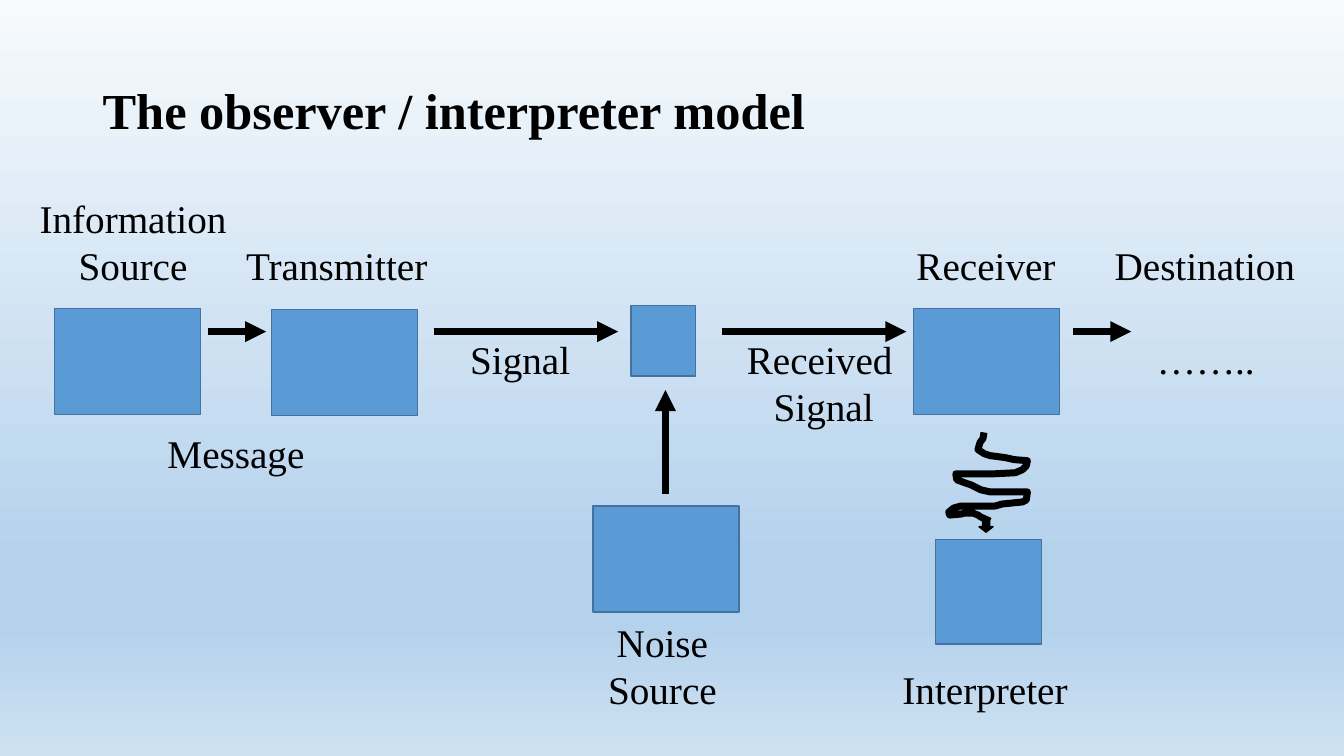
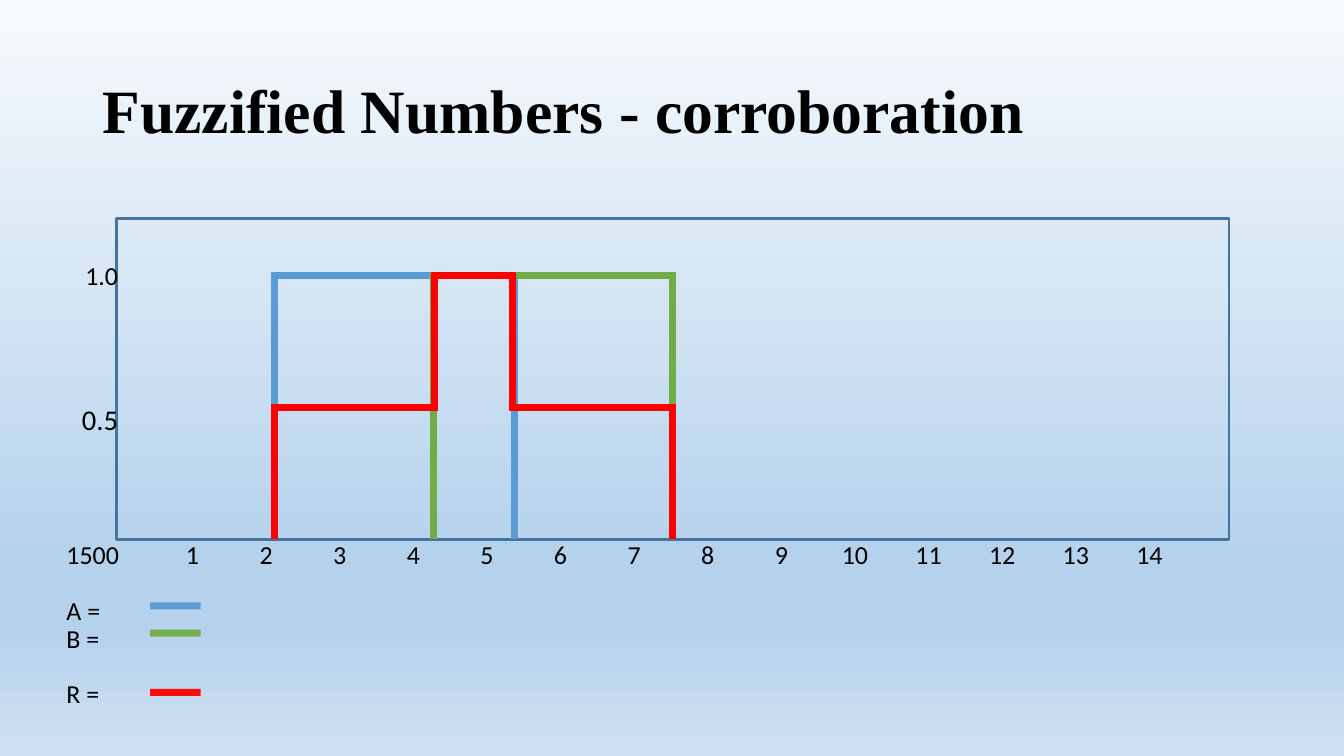
from dataclasses import dataclass

import lxml.etree
import pptx
import pptx.dml.color
import pptx.enum.dml
import pptx.enum.shapes
import pptx.enum.text
import pptx.oxml.ns
import pptx.shapes.base
import pptx.slide
import pptx.util

Inches = pptx.util.Inches
Align = pptx.enum.text.PP_ALIGN
Preset = pptx.enum.shapes.MSO_SHAPE
qn = pptx.oxml.ns.qn
Point = tuple[float, float]

BLACK = "000000"
BLUE = "5B9BD5"
OUTLINE = "43739E"
GREEN = "70AD47"
RED = "FF0000"
BACKDROP = [(0, "F7FAFD"), (74, "B5D2EC"), (83, "B5D2EC"), (100, "CEE1F2")]
SERIF = "Times New Roman"
SANS = "Calibri"
LINE_WIDTH = 5
HALF_LINE = 0.035


@dataclass
class Block:
    left: float
    top: float
    width: float
    height: float
    kind: Preset = Preset.RECTANGLE
    fill: str | None = BLUE
    outline: str = OUTLINE
    weight: float = 1


@dataclass
class Label:
    text: str
    x: float
    y: float
    size: float = 18.5
    font: str = SANS
    align: Align = Align.CENTER


@dataclass
class Stroke:
    start: Point
    end: Point
    color: str = BLACK
    arrow: bool = False
    opacity: int = 100


@dataclass
class LegendEntry:
    name: str
    label_y: float
    line_y: float
    color: str


def rgb(value: str) -> pptx.dml.color.RGBColor:
    return pptx.dml.color.RGBColor.from_string(value)


def add_text(page: pptx.slide.Slide, text: str, area: tuple[float, ...],
             font: dict, align: Align = Align.LEFT, inset: float = 0,
             spacing: float = 1) -> None:
    box = page.shapes.add_textbox(*map(Inches, area))
    frame_format = {
        "word_wrap": True,
        "vertical_anchor": pptx.enum.text.MSO_ANCHOR.MIDDLE,
        "margin_left": Inches(inset), "margin_right": Inches(inset),
        "margin_top": Inches(0), "margin_bottom": Inches(0),
    }
    for name, value in frame_format.items():
        setattr(box.text_frame, name, value)
    para = box.text_frame.paragraphs[0]
    para.alignment = align
    para.line_spacing = spacing
    span = para.add_run()
    span.text = text
    for name, value in font.items():
        setattr(span.font, name, value)
    span.font.color.rgb = rgb(BLACK)


def add_label(page: pptx.slide.Slide, label: Label) -> None:
    width, height = 2.4, 0.5
    share = {Align.LEFT: 0, Align.CENTER: 0.5, Align.RIGHT: 1}[label.align]
    area = (label.x - width * share, label.y - height / 2, width, height)
    font = {"name": label.font, "size": pptx.util.Pt(label.size)}
    add_text(page, label.text, area, font, label.align)


def add_block(page: pptx.slide.Slide, block: Block) -> None:
    area = (block.left, block.top, block.width, block.height)
    shape = page.shapes.add_shape(block.kind, *map(Inches, area))
    shape.shadow.inherit = False
    if block.fill:
        shape.fill.solid()
        shape.fill.fore_color.rgb = rgb(block.fill)
    else:
        shape.fill.background()
    shape.line.color.rgb = rgb(block.outline)
    shape.line.width = pptx.util.Pt(block.weight)


def add_stroke(page: pptx.slide.Slide, stroke: Stroke) -> None:
    line = page.shapes.add_connector(
        pptx.enum.shapes.MSO_CONNECTOR.STRAIGHT,
        *map(Inches, stroke.start + stroke.end))
    line.line.color.rgb = rgb(stroke.color)
    line.line.width = pptx.util.Pt(LINE_WIDTH)
    properties = line.element.spPr
    outline = properties.find(qn("a:ln"))
    if stroke.opacity < 100:
        color = outline.find(".//" + qn("a:srgbClr"))
        lxml.etree.SubElement(color, qn("a:alpha"), val=str(stroke.opacity * 1000))
    if stroke.arrow:
        lxml.etree.SubElement(outline, qn("a:tailEnd"), type="triangle")
    lxml.etree.SubElement(properties, qn("a:effectLst"))


def add_curve(page: pptx.slide.Slide, points: list[Point], color: str) -> None:
    for (x1, y1), (x2, y2) in zip(points, points[1:]):
        overlap = HALF_LINE if y1 == y2 else 0
        add_stroke(page, Stroke((x1 - overlap, y1), (x2 + overlap, y2), color))


def add_squiggle(page: pptx.slide.Slide, points: list[Point]) -> None:
    corners = [(Inches(x), Inches(y)) for x, y in points]
    builder = page.shapes.build_freeform(*corners[0])
    builder.add_line_segments(corners[1:], close=False)
    shape = builder.convert_to_shape()
    shape.shadow.inherit = False
    shape.fill.background()
    shape.line.color.rgb = rgb(BLACK)
    shape.line.width = pptx.util.Pt(LINE_WIDTH)


def add_page(deck, title: str, size: float) -> pptx.slide.Slide:
    page = deck.slides.add_slide(deck.slide_layouts[6])
    fill = page.background.fill
    fill.gradient()
    fill.gradient_angle = 270
    stops = page.element.find(".//" + qn("a:gsLst"))
    for stop in list(stops):
        stops.remove(stop)
    for position, color in BACKDROP:
        stop = lxml.etree.SubElement(stops, qn("a:gs"), pos=str(position * 1000))
        lxml.etree.SubElement(stop, qn("a:srgbClr"), val=color)
    font = {"name": SERIF, "size": pptx.util.Pt(size), "bold": True}
    add_text(page, title, (0.92, 0.4, 11.5, 1.45), font, inset=0.1, spacing=0.9)
    return page


def build_model(deck) -> None:
    page = add_page(deck, "The observer / interpreter model", 36)
    first_row, row_pitch = 2.16, 0.467
    labels = [
        ("Information", 1.32, 0), ("Source", 1.32, 1), ("Transmitter", 3.34, 1),
        ("Receiver", 9.78, 1), ("Destination", 11.95, 1),
        ("Signal", 5.16, 3), ("Received", 8.13, 3), ("……..", 11.96, 3),
        ("Signal", 8.17, 4), ("Message", 2.34, 5),
        ("Noise", 6.57, 9), ("Source", 6.57, 10), ("Interpreter", 9.77, 10),
    ]
    for text, x, row in labels:
        add_label(page, Label(text, x, first_row + row * row_pitch, 28, SERIF))

    for left, top in [(0.54, 3.06), (2.69, 3.07), (9.06, 3.06), (5.88, 5.02)]:
        add_block(page, Block(left, top, 1.45, 1.05))
    add_block(page, Block(6.26, 3.03, 0.64, 0.7))
    add_block(page, Block(9.28, 5.35, 1.05, 1.04))

    flow_y = 3.29
    for start, end in [(2.06, 2.64), (4.3, 6.13), (7.16, 8.99), (10.64, 11.22)]:
        add_stroke(page, Stroke((start, flow_y), (end, flow_y), arrow=True))
    add_stroke(page, Stroke((6.6, 4.9), (6.6, 3.87), arrow=True))

    add_squiggle(page, [
        (9.76, 4.29), (9.75, 4.35), (9.72, 4.39), (9.7, 4.46), (9.76, 4.5),
        (9.82, 4.52), (9.97, 4.54), (10.06, 4.56), (10.19, 4.57), (10.18, 4.62),
        (10.14, 4.66), (10.07, 4.69), (9.87, 4.7), (9.48, 4.7), (9.49, 4.76),
        (9.57, 4.79), (9.63, 4.81), (9.67, 4.83), (9.73, 4.86), (9.82, 4.88),
        (10.19, 4.88), (10.18, 4.96), (10.14, 4.98), (9.94, 5), (9.87, 5.02),
        (9.53, 5.02), (9.46, 5.04), (9.41, 5.08), (9.42, 5.11), (9.53, 5.1),
        (9.57, 5.09), (9.65, 5.09), (9.7, 5.11), (9.73, 5.13), (9.82, 5.17),
    ])
    add_block(page, Block(9.71, 5.17, 0.14, 0.11, Preset.DOWN_ARROW, BLACK, BLACK))


def build_corroboration(deck) -> None:
    page = add_page(deck, "Fuzzified Numbers - corroboration", 44)
    base, half, full = 5.35, 4.04, 2.73
    add_block(page, Block(1.16, 2.17, 11.03, 3.18, fill=None, weight=2))
    add_label(page, Label("1.0", 1.17, full, align=Align.RIGHT))
    add_label(page, Label("0.5", 1.17, 4.16, 20.4, align=Align.RIGHT))
    axis_y, first_tick, tick_pitch = 5.5, 1.91, 0.73
    add_label(page, Label("1500", 0.92, axis_y))
    for tick in range(14):
        add_label(page, Label(str(tick + 1), first_tick + tick * tick_pitch, axis_y))

    legend = [
        LegendEntry("A =", 6.05, 6.01, BLUE),
        LegendEntry("B =", 6.33, 6.28, GREEN),
        LegendEntry("R =", 6.88, 6.87, RED),
    ]
    for entry in legend:
        add_label(page, Label(entry.name, 0.66, entry.label_y, align=Align.LEFT))
        add_stroke(page, Stroke((1.49, entry.line_y), (1.99, entry.line_y),
                                entry.color, opacity=95))

    for left, right, color in [(2.72, 5.1, BLUE), (4.3, 6.67, GREEN)]:
        add_curve(page, [(left, base), (left, full), (right, full), (right, base)], color)
    add_curve(page, [
        (2.72, base), (2.72, half), (4.31, half), (4.31, full),
        (5.08, full), (5.08, half), (6.67, half), (6.67, base),
    ], RED)


def main() -> None:
    deck = pptx.Presentation()
    deck.slide_width = Inches(13.33)
    deck.slide_height = Inches(7.5)
    build_model(deck)
    build_corroboration(deck)
    deck.save("out.pptx")


if __name__ == "__main__":
    main()
